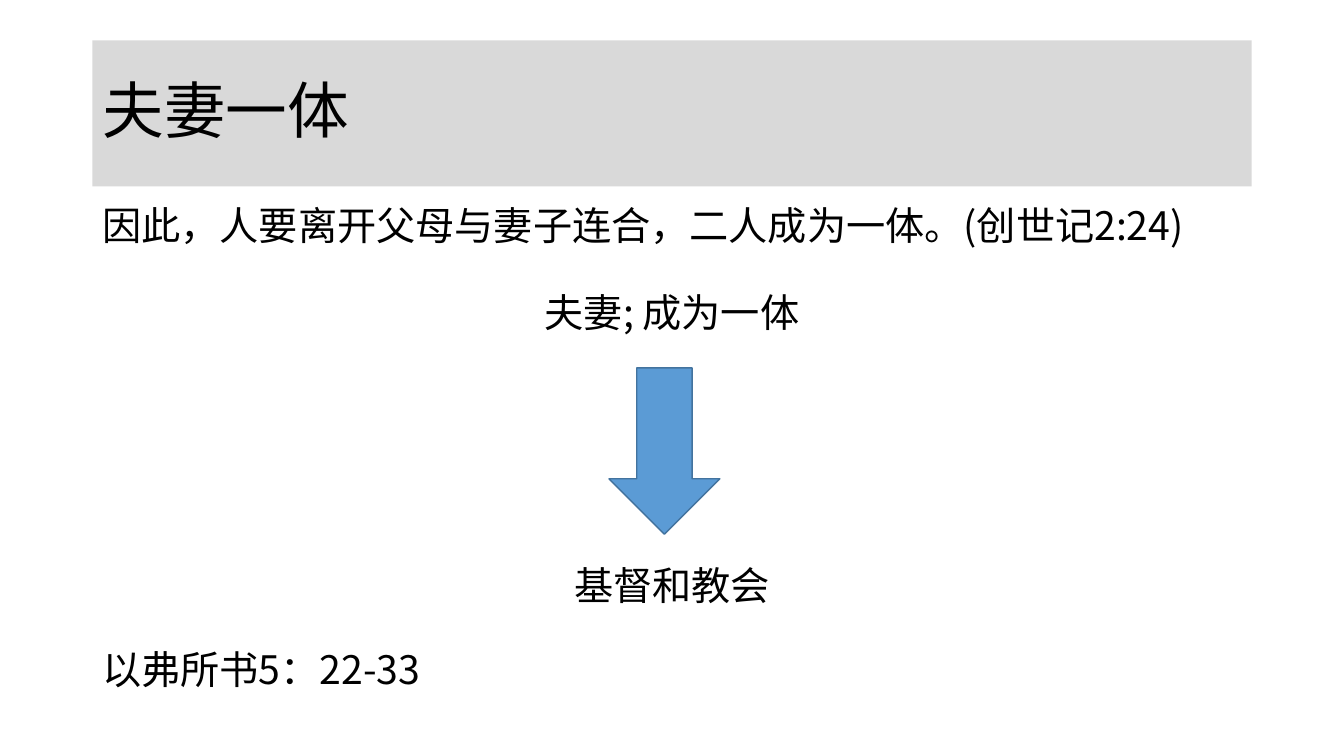
import pptx
import pptx.util
import pptx.dml.color
import pptx.enum.shapes
import pptx.enum.text
import pptx.oxml.ns
import lxml.etree

FONT = "Noto Sans CJK SC"
WIDE, HIGH = 13.33, 7.5
COL, ROW = WIDE / 80, HIGH / 75
LEFT, SPAN = 5.5, 69
Pt = pptx.util.Pt
ALIGN = pptx.enum.text.PP_ALIGN


def apply(item, values):
    for key, value in values.items():
        setattr(item, key, value)


def color(target, code):
    target.rgb = pptx.dml.color.RGBColor.from_string(code)


def paint(shape, code):
    shape.fill.solid()
    color(shape.fill.fore_color, code)


def grid(col, row, cols, rows):
    sides = (col * COL, row * ROW, cols * COL, rows * ROW)
    return [pptx.util.Inches(side) for side in sides]


def write(para, text, size, **form):
    apply(para, {"line_spacing": 0.9, "alignment": ALIGN.LEFT, **form})
    run = para.add_run()
    run.text = text
    apply(run.font, {"size": Pt(size), "name": FONT})
    color(run.font.color, "000000")
    east = lxml.etree.SubElement(run.font._element, pptx.oxml.ns.qn("a:ea"))
    east.set("typeface", FONT)


def head(slide, text, row, rows):
    title = slide.shapes.title
    place = grid(LEFT, row, SPAN, rows)
    apply(title, dict(zip(("left", "top", "width", "height"), place)))
    paint(title, "D9D9D9")
    frame = title.text_frame
    apply(frame, {"vertical_anchor": pptx.enum.text.MSO_ANCHOR.MIDDLE, "word_wrap": True})
    write(frame.paragraphs[0], text, 44)


def block(slide, lines, row, rows, align=ALIGN.LEFT, gap=10):
    frame = slide.shapes.add_textbox(*grid(LEFT, row, SPAN, rows)).text_frame
    frame.word_wrap = True
    for index, text in enumerate(lines):
        para = frame.add_paragraph() if index else frame.paragraphs[0]
        write(para, text, 28, alignment=align, space_before=Pt(gap if index else 10))


def arrow(slide, col, row, cols, rows):
    kind = pptx.enum.shapes.MSO_SHAPE.DOWN_ARROW
    shape = slide.shapes.add_shape(kind, *grid(col, row, cols, rows))
    shape.shadow.inherit = False
    paint(shape, "5B9BD5")
    color(shape.line.color, "43739E")
    shape.line.width = Pt(1)


def main():
    deck = pptx.Presentation()
    apply(deck, {"slide_width": pptx.util.Inches(WIDE), "slide_height": pptx.util.Inches(HIGH)})
    slide = deck.slides.add_slide(deck.slide_layouts.get_by_name("Title Only"))
    head(slide, "夫妻一体", 4, 14.5)
    block(slide, ["因此，人要离开父母与妻子连合，二人成为一体。(创世记2:24)"], 20, 7.2)
    block(slide, ["夫妻; 成为一体", "基督和教会"], 28.6, 34, ALIGN.CENTER, 165)
    arrow(slide, 36.25, 36.5, 6.6, 16.5)
    block(slide, ["以弗所书5：22-33"], 64.1, 5.9)
    deck.save("out.pptx")


if __name__ == "__main__":
    main()
